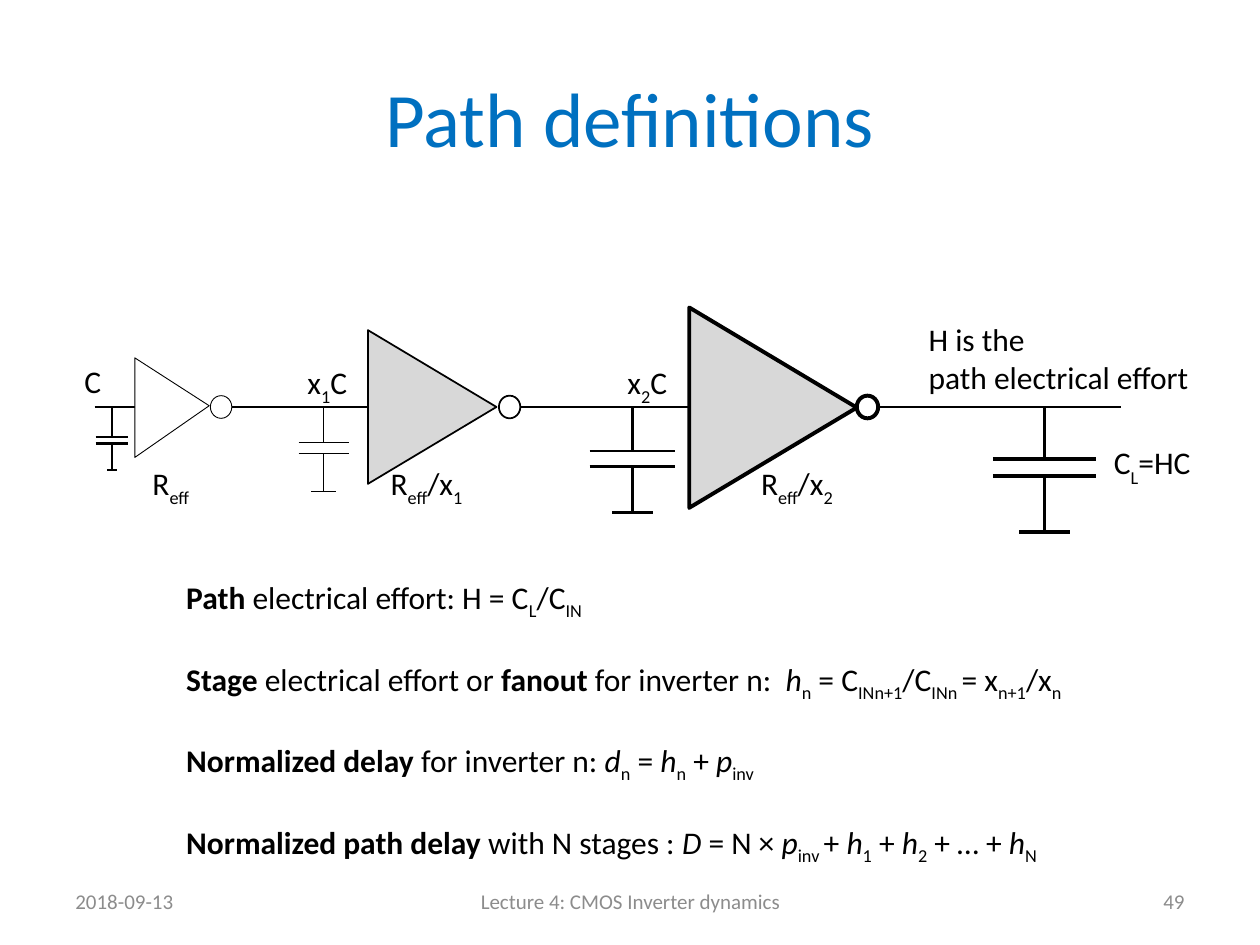
from dataclasses import dataclass

from lxml import etree
from pptx import Presentation
from pptx.dml.color import RGBColor
from pptx.enum import shapes, text
from pptx.oxml.ns import qn
from pptx.util import Inches, Pt


@dataclass(frozen=True)
class Theme:
    font: str = "Calibri"
    title: RGBColor = RGBColor(0x00, 0x70, 0xC0)
    ink: RGBColor = RGBColor(0, 0, 0)
    muted: RGBColor = RGBColor(0x8C, 0x8C, 0x8C)
    gate: RGBColor = RGBColor(0xD8, 0xD8, 0xD8)
    paper: RGBColor = RGBColor(255, 255, 255)
    title_size: int = 44
    body_size: int = 18
    footer_size: int = 12


theme = Theme()
LEFT, CENTER, RIGHT = text.PP_ALIGN.LEFT, text.PP_ALIGN.CENTER, text.PP_ALIGN.RIGHT

prs = Presentation()
prs.slide_width, prs.slide_height = Inches(10), Inches(7.5)
slide = prs.slides.add_slide(prs.slide_layouts[6])


def write(box, lines, size=theme.body_size, color=theme.ink, align=LEFT,
          inset=None, middle=False, wrap=True, gap=0, sub=-30):
    """Add text; the marks * ^ ~ switch bold, italic and subscript on or off."""
    frame = slide.shapes.add_textbox(*map(Inches, box)).text_frame
    frame.word_wrap = wrap
    if middle:
        frame.vertical_anchor = text.MSO_ANCHOR.MIDDLE
    if inset is not None:
        frame.margin_left = frame.margin_right = Inches(inset)
        frame.margin_top = frame.margin_bottom = Inches(inset)
    for index, line in enumerate(lines):
        paragraph = frame.add_paragraph() if index else frame.paragraphs[0]
        paragraph.alignment = align
        paragraph.space_before = Pt(gap if index else 0)
        style = {"*": False, "^": False, "~": False}
        for mark in style:
            line = line.replace(mark, f"|{mark}|")
        for piece in filter(None, line.split("|")):
            if piece in style:
                style[piece] = not style[piece]
                continue
            run = paragraph.add_run()
            run.text = piece
            run.font.name, run.font.size = theme.font, Pt(size)
            run.font.color.rgb = color
            run.font.bold, run.font.italic = style["*"], style["^"]
            if style["~"]:
                run.font._element.set("baseline", str(sub * 1000))


def wire(x1, y1, x2, y2, width):
    line = slide.shapes.add_connector(
        shapes.MSO_CONNECTOR.STRAIGHT, *map(Inches, (x1, y1, x2, y2)))
    line.line.color.rgb = theme.ink
    line.line.width = Pt(width)
    etree.SubElement(line._element.spPr, qn("a:effectLst"))


# Title and footer
write((0.5, 0.3, 9, 1.25), ["Path definitions"], theme.title_size, theme.title,
      CENTER, middle=True)
for left, width, footer, align in [
    (0.5, 2.33, "2018-09-13", LEFT),
    (3.42, 3.17, "Lecture 4: CMOS Inverter dynamics", CENTER),
    (7.17, 2.33, "49", RIGHT),
]:
    write((left, 6.95, width, 0.4), [footer], theme.footer_size, theme.muted,
          align, middle=True)

# Signal wires between the stages
signal_y = 3.23
for start, end in [(0.75, 1.07), (1.81, 2.93), (4.12, 5.49), (6.96, 8.9)]:
    wire(start, signal_y, end, signal_y, 1.5)

# Capacitors: centre, upper and lower plate, half plate, ground, half ground
for x, upper, lower, plate, ground, foot, width in [
    (0.89, 3.47, 3.52, 0.13, 3.73, 0.04, 1.5),
    (2.57, 3.51, 3.6, 0.2, 3.9, 0.1, 0.5),
    (5.02, 3.58, 3.7, 0.34, 4.07, 0.16, 1.5),
    (8.29, 3.64, 3.78, 0.41, 4.22, 0.2, 2.25),
]:
    wire(x, signal_y, x, upper, width)
    wire(x - plate, upper, x + plate, upper, width)
    wire(x - plate, lower, x + plate, lower, width)
    wire(x, lower, x, ground, width)
    wire(x - foot, ground, x + foot, ground, width)

# Inverters: the unit stage, then the two scaled stages
outline = slide.shapes.build_freeform(Inches(1.07), Inches(3.63))
outline.add_line_segments(
    [(Inches(1.66), Inches(3.22)), (Inches(1.07), Inches(2.84))], close=True)
gate_parts = [(outline.convert_to_shape(), theme.paper, 0.5)]
for box, width in [((2.82, 2.72, 1.22, 1.02), 1), ((5.34, 2.57, 1.59, 1.33), 2.25)]:
    triangle = slide.shapes.add_shape(
        shapes.MSO_SHAPE.ISOSCELES_TRIANGLE, *map(Inches, box))
    triangle.rotation = 90
    gate_parts.append((triangle, theme.gate, width))
for left, width in [(1.67, 0.5), (3.96, 1), (6.8, 2.25)]:
    bubble = slide.shapes.add_shape(
        shapes.MSO_SHAPE.OVAL, *map(Inches, (left, 3.14, 0.17, 0.18)))
    gate_parts.append((bubble, theme.paper, width))
for part, fill, width in gate_parts:
    part.shadow.inherit = False
    part.fill.solid()
    part.fill.fore_color.rgb = fill
    part.line.color.rgb = theme.ink
    part.line.width = Pt(width)

# Circuit labels
for left, top, width, height, lines in [
    (0.67, 2.87, 0.14, 0.3, ["C"]),
    (2.44, 2.88, 0.34, 0.3, ["x~1~C"]),
    (4.98, 2.88, 0.94, 0.3, ["x~2~C"]),
    (1.21, 3.68, 0.32, 0.3, ["R~eff~"]),
    (3.1, 3.68, 0.61, 0.3, ["R~eff~/x~1~"]),
    (6.04, 3.68, 1.03, 0.3, ["R~eff~/x~2~"]),
    (8.84, 3.52, 0.63, 0.3, ["C~L~=HC"]),
    (7.37, 2.54, 2.1, 0.61, ["H is the", "path electrical effort"]),
]:
    write((left, top, width, height), lines, inset=0, wrap=False)

# Definitions
write((1.38, 4.54, 7.64, 2.02), [
    "*Path* electrical effort: H = C~L~/C~IN~",
    "*Stage *electrical effort or *fanout* for inverter n:  "
    "^h^~n~ = C~INn+1~/C~INn ~= x~n+1~/x~n~",
    "*Normalized delay *for inverter n: ^d^~n~ = ^h^~n~ + ^p^~inv~",
    "*Normalized path delay *with N stages : "
    "^D^ = N × ^p^~inv ~+ ^h^~1~ + ^h^~2~ + … + ^h^~N~",
], gap=22, sub=-25)

prs.save("out.pptx")
